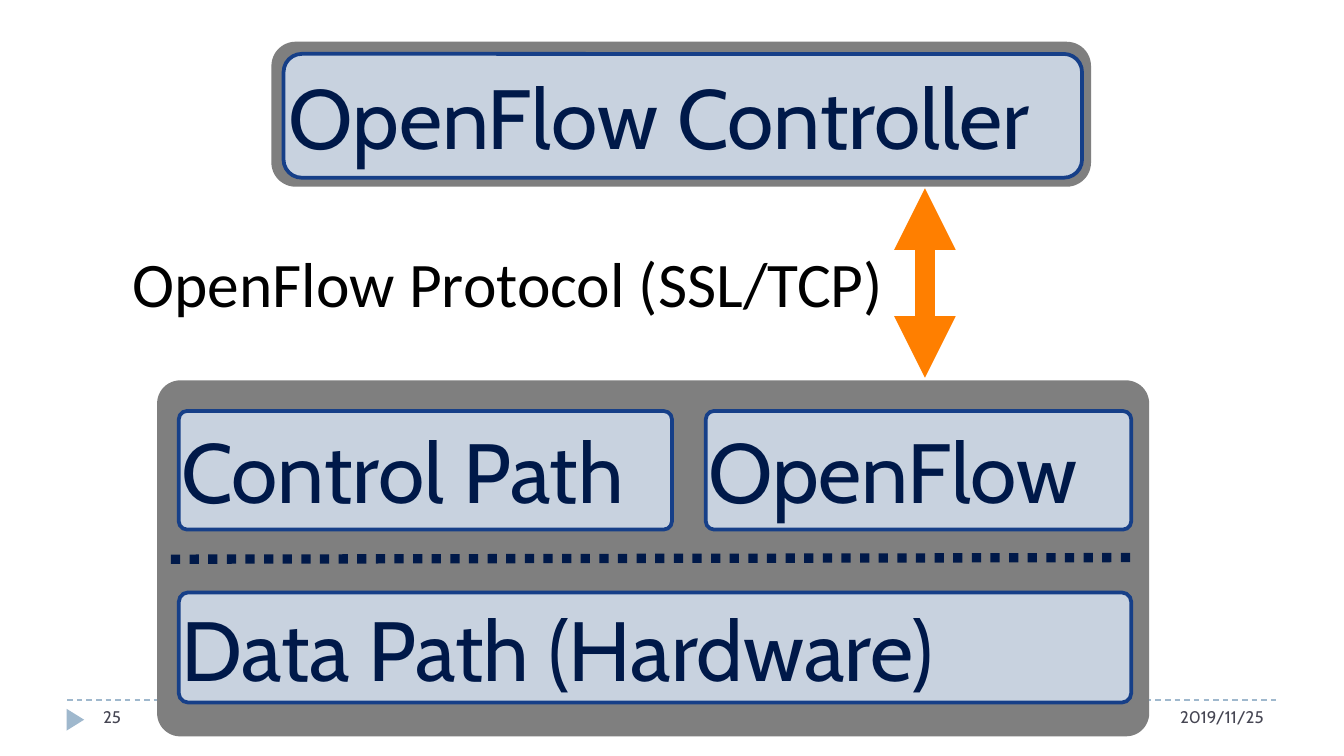
import dataclasses

import lxml.etree
import pptx
import pptx.dml.color
import pptx.enum.dml
import pptx.enum.shapes
import pptx.enum.text
import pptx.oxml.ns
import pptx.util

Cm = pptx.util.Cm
Pt = pptx.util.Pt
RGBColor = pptx.dml.color.RGBColor
Shapes = pptx.enum.shapes.MSO_SHAPE
Dash = pptx.enum.dml.MSO_LINE
Align = pptx.enum.text.PP_ALIGN
Anchor = pptx.enum.text.MSO_ANCHOR

NAVY = RGBColor(0x00, 0x19, 0x49)
BLUE = RGBColor(0x16, 0x3F, 0x88)
PALE_BLUE = RGBColor(0xC8, 0xD2, 0xDF)
FOOTER_BLUE = RGBColor(0x9F, 0xB8, 0xCD)
FOOTER_TEXT = RGBColor(0x46, 0x46, 0x53)
GRAY = RGBColor(0x7F, 0x7F, 0x7F)
ORANGE = RGBColor(0xFF, 0x7F, 0x00)
BLACK = RGBColor(0x00, 0x00, 0x00)


@dataclasses.dataclass
class Box:
    """A rounded box in centimetres; a box with text is a component."""
    left: float
    top: float
    width: float
    height: float
    rounding: float
    text: str = ""


# Device frame and its components share margins and rows
DEVICE_LEFT, DEVICE_RIGHT = 3.38, 21.38
ROW_TOP, ROW_HEIGHT = 7.77, 2.24
OPENFLOW_LEFT = 13.34

BOXES = [
    Box(5.13, 0.79, 15.49, 2.74, 0.167),
    Box(5.36, 1.02, 15.09, 2.34, 0.147, "OpenFlow Controller"),
    Box(2.97, 7.19, 18.75, 6.73, 0.065),
    Box(DEVICE_LEFT, ROW_TOP, 9.32, ROW_HEIGHT, 0.069, "Control Path"),
    Box(OPENFLOW_LEFT, ROW_TOP, DEVICE_RIGHT - OPENFLOW_LEFT, ROW_HEIGHT, 0.069, "OpenFlow"),
    Box(DEVICE_LEFT, 11.2, DEVICE_RIGHT - DEVICE_LEFT, 2.08, 0.085, "Data Path (Hardware)"),
]


def write_text(shape, text: str, *, size: float, color: RGBColor, font: str = "Cabin",
               align=Align.LEFT, anchor=Anchor.MIDDLE, margins: bool = False,
               wrap: bool = True) -> None:
    frame = shape.text_frame
    frame.word_wrap = wrap
    frame.vertical_anchor = anchor
    if not margins:
        frame.margin_left = frame.margin_top = frame.margin_right = frame.margin_bottom = 0
    paragraph = frame.paragraphs[0]
    paragraph.alignment = align
    run = paragraph.add_run()
    run.text = text
    run.font.name = font
    run.font.size = Pt(size)
    run.font.color.rgb = color


def add_text_box(slide, left: float, top: float, width: float, height: float,
                 text: str, **text_format):
    shape = slide.shapes.add_textbox(Cm(left), Cm(top), Cm(width), Cm(height))
    write_text(shape, text, **text_format)
    return shape


def add_filled_shape(slide, kind, left: float, top: float, width: float, height: float,
                     fill: RGBColor):
    shape = slide.shapes.add_shape(kind, Cm(left), Cm(top), Cm(width), Cm(height))
    shape.shadow.inherit = False
    shape.fill.solid()
    shape.fill.fore_color.rgb = fill
    shape.line.fill.background()
    return shape


def add_box(slide, box: Box) -> None:
    shape = add_filled_shape(slide, Shapes.ROUNDED_RECTANGLE, box.left, box.top,
                             box.width, box.height, PALE_BLUE if box.text else GRAY)
    shape.adjustments[0] = box.rounding
    if box.text:
        shape.line.color.rgb = BLUE
        shape.line.width = Pt(2)
        write_text(shape, box.text, size=45, color=NAVY)


def add_line(slide, start: tuple[float, float], end: tuple[float, float], color: RGBColor,
             width: float, dash=None, arrows: bool = False) -> None:
    line = slide.shapes.add_connector(pptx.enum.shapes.MSO_CONNECTOR.STRAIGHT,
                                      Cm(start[0]), Cm(start[1]), Cm(end[0]), Cm(end[1]))
    line.line.color.rgb = color
    line.line.width = Pt(width)
    if dash is not None:
        line.line.dash_style = dash
    properties = line._element.spPr
    if arrows:
        outline = properties.find(pptx.oxml.ns.qn("a:ln"))
        for tag in ("a:headEnd", "a:tailEnd"):
            lxml.etree.SubElement(outline, pptx.oxml.ns.qn(tag), type="triangle")
    lxml.etree.SubElement(properties, pptx.oxml.ns.qn("a:effectLst"))


def main() -> None:
    presentation = pptx.Presentation()
    presentation.slide_width = Cm(25.4)
    presentation.slide_height = Cm(14.29)
    slide = presentation.slides.add_slide(presentation.slide_layouts[6])

    # Footer: rule, marker, date and page number
    add_line(slide, (1.27, 13.23), (24.13, 13.23), FOOTER_BLUE, 0.75, Dash.DASH)
    marker = add_filled_shape(slide, Shapes.ISOSCELES_TRIANGLE, 1.22, 13.44, 0.41, 0.33,
                              FOOTER_BLUE)
    marker.rotation = 90
    footer_format = dict(size=9, color=FOOTER_TEXT, anchor=Anchor.TOP, margins=True)
    add_text_box(slide, 19.89, 13.23, 4.24, 0.76, "2019/11/25", align=Align.RIGHT,
                 **footer_format)
    add_text_box(slide, 1.7, 13.23, 2.74, 0.76, "25", **footer_format)

    # Controller and device
    for box in BOXES:
        add_box(slide, box)
    add_line(slide, (3.23, 10.57), (21.39, 10.54), NAVY, 5, Dash.ROUND_DOT)

    # Protocol between them
    add_line(slide, (17.48, 3.56), (17.48, 7.14), ORANGE, 11, arrows=True)
    label = add_text_box(slide, 2.51, 4.6, 14.35, 1.45, "OpenFlow Protocol (SSL/TCP)",
                         size=34, color=BLACK, font="Calibri", wrap=False)
    label.text_frame.auto_size = pptx.enum.text.MSO_AUTO_SIZE.SHAPE_TO_FIT_TEXT

    presentation.save("out.pptx")


if __name__ == "__main__":
    main()
